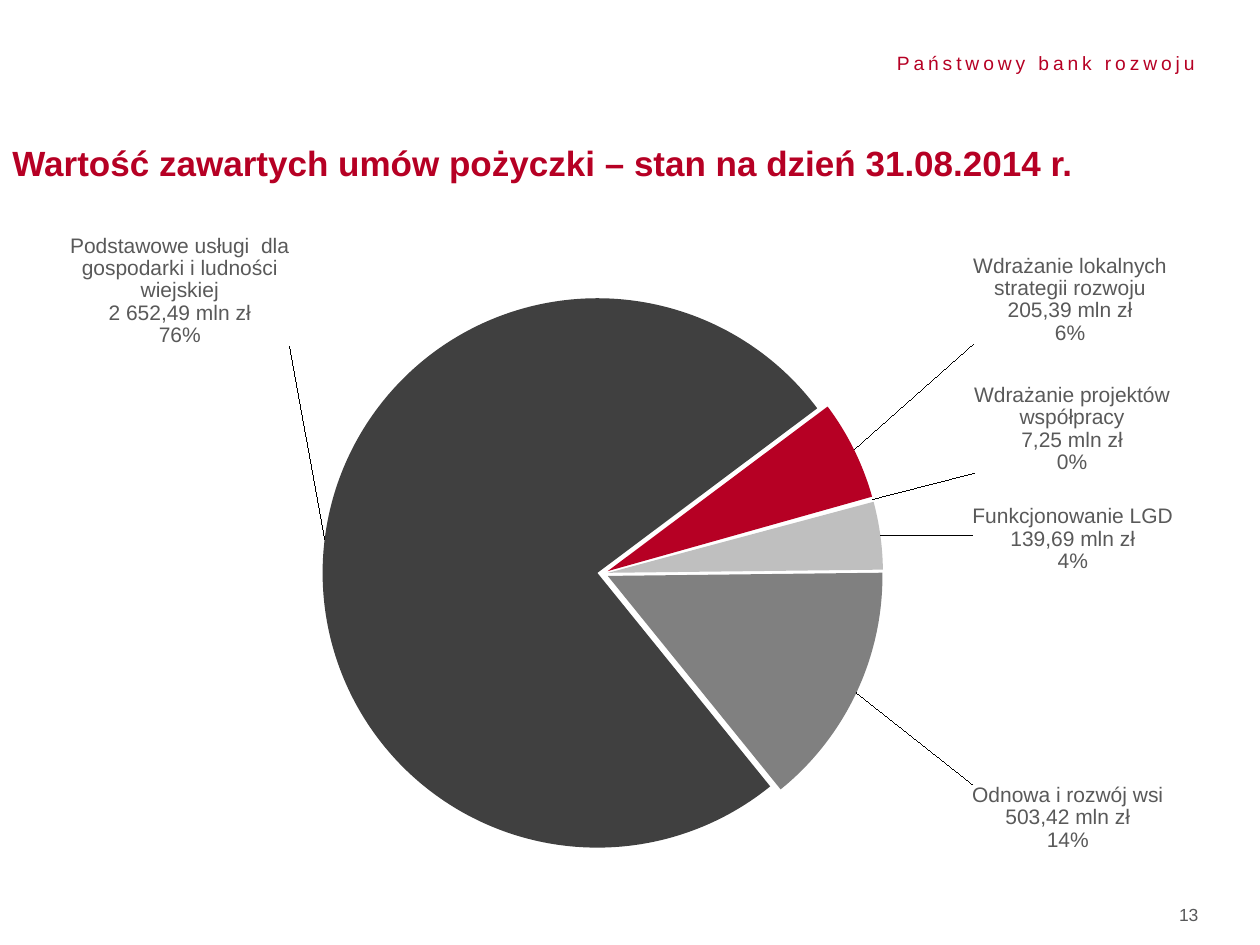
from lxml.etree import SubElement
from pptx import Presentation
from pptx.chart.data import CategoryChartData
from pptx.dml.color import RGBColor
from pptx.enum.chart import XL_CHART_TYPE
from pptx.enum.text import MSO_ANCHOR, PP_ALIGN
from pptx.oxml import parse_xml
from pptx.oxml.ns import nsdecls, qn
from pptx.util import Inches, Pt

COLUMNS, ROWS = 100, 75
CELL = Inches(0.1)
FONT = "Arial"
COLORS = {
    "red": "B60024", "silver": "BFBFBF", "grey": "808080", "charcoal": "404040",
    "white": "FFFFFF", "black": "000000", "label": "595959", "number": "58595A",
}
SLICES = [
    ("Funkcjonowanie LGD", 139.69, "139,69 mln zł", "4%", "silver"),
    ("Odnowa i rozwój wsi", 503.42, "503,42 mln zł", "14%", "grey"),
    ("Podstawowe usługi  dla gospodarki i ludności wiejskiej", 2652.49,
     "2 652,49 mln zł", "76%", "charcoal"),
    ("Wdrażanie lokalnych strategii rozwoju", 205.39, "205,39 mln zł", "6%", "red"),
    ("Wdrażanie projektów współpracy", 7.25, "7,25 mln zł", "0%", "white"),
]
LABEL_SHIFTS = [(0.073, 0.06), (0.094, 0.139), (-0.024, -0.302),
                (0.097, -0.161), (0.081, -0.038)]


def grid(*cells):
    """Turn grid columns and rows into lengths."""
    return [int(cell * CELL) for cell in cells]


def color(name):
    """Look up a colour by name."""
    return RGBColor.from_string(COLORS[name])


def style(font, size, shade):
    """Set the typeface, size and colour of a font."""
    font.name = FONT
    font.size = Pt(size)
    font.color.rgb = color(shade)


def add_text(page, place, text, size, shade, align=PP_ALIGN.LEFT,
             anchor=MSO_ANCHOR.MIDDLE, wrap=True):
    """Add a one-paragraph text box and return the paragraph."""
    frame = page.shapes.add_textbox(*grid(*place)).text_frame
    frame.word_wrap = wrap
    frame.vertical_anchor = anchor
    frame.text = text
    para = frame.paragraphs[0]
    para.alignment = align
    style(para.font, size, shade)
    return para


def add_header(page):
    """Add the letter-spaced header line."""
    para = add_text(page, (70.2, 3.6, 32.3, 3.9), "Państwowy bank rozwoju", 11,
                    "red", anchor=MSO_ANCHOR.TOP, wrap=False)
    para.runs[0].font._element.set("spc", "220")


def add_title(page):
    """Add the bold slide title."""
    title = "Wartość zawartych umów pożyczki – stan na dzień 31.08.2014 r."
    para = add_text(page, (0, 10.5, 92.1, 4.8), title, 20, "red")
    para.font.bold = True


def make_layout(settings):
    """Make a manual chart layout from its settings."""
    layout = parse_xml(f'<c:layout {nsdecls("c")}><c:manualLayout/></c:layout>')
    for tag, value in settings.items():
        SubElement(layout[0], qn(f"c:{tag}")).set("val", str(value))
    return layout


def add_pie(page):
    """Add the pie chart of loan values."""
    data = CategoryChartData(number_format='#,##0.00\\ "zł"')
    data.categories = [name for name, *_ in SLICES]
    data.add_series("Series 1", [value for _, value, *_ in SLICES])
    chart = page.shapes.add_chart(
        XL_CHART_TYPE.PIE, *grid(3.5, 18.6, 92.1, 50.4), data).chart
    chart.has_title = False
    chart.has_legend = False
    style(chart.font, 18, "black")
    plot = chart.plots[0]
    plot.vary_by_categories = True
    series = plot.series[0]
    for index, (*_, shade) in enumerate(SLICES):
        shape = series.points[index].format
        shape.fill.solid()
        shape.fill.fore_color.rgb = color(shade)
        shape.line.fill.background()
    arrange_pie(series)
    label_slices(series)


def arrange_pie(series):
    """Place the plot, turn the first slice and part the slices."""
    explosion = f'<c:explosion {nsdecls("c")} val="2"/>'
    series._element.find(qn("c:tx")).addnext(parse_xml(explosion))
    for point in series._element.findall(qn("c:dPt")):
        point.find(qn("c:spPr")).addprevious(parse_xml(explosion))
    pie = series._element.getparent()
    angle = pie.find(qn("c:firstSliceAng"))
    if angle is None:
        angle = SubElement(pie, qn("c:firstSliceAng"))
    angle.set("val", "75")
    area = pie.getparent()
    for layout in area.findall(qn("c:layout")):
        area.remove(layout)
    area.insert(0, make_layout({
        "layoutTarget": "inner", "xMode": "edge", "yMode": "edge",
        "x": 0.24, "y": 0.093, "w": 0.483, "h": 0.883}))


def label_slices(series):
    """Label each slice with its name, amount and share."""
    labels = series.data_labels
    labels.show_category_name = True
    labels.show_value = True
    labels.show_percentage = True
    labels.number_format = '#,##0.00\\ "zł"'
    labels.number_format_is_linked = False
    style(labels.font, 12, "label")
    for index, (name, _, amount, share, _) in enumerate(SLICES):
        frame = series.points[index].data_label.text_frame
        frame.text = "\n".join([name, amount, share])
        frame.word_wrap = True
        for para in frame.paragraphs:
            style(para.runs[0].font, 12, "label")
    for body in labels._element.iter(qn("a:bodyPr")):
        body.set("wrap", "square")
    for label, (right, down) in zip(labels._element.findall(qn("c:dLbl")), LABEL_SHIFTS):
        label.find(qn("c:idx")).addnext(make_layout({"x": right, "y": down}))
        for tag in ("showVal", "showCatName", "showPercent"):
            label.find(qn(f"c:{tag}")).set("val", "1")
    leader = labels._element.find(qn("c:showLeaderLines"))
    if leader is None:
        leader = SubElement(labels._element, qn("c:showLeaderLines"))
    leader.set("val", "1")


def main():
    """Build and save the slide."""
    deck = Presentation()
    deck.slide_width, deck.slide_height = grid(COLUMNS, ROWS)
    page = deck.slides.add_slide(deck.slide_layouts[6])
    add_header(page)
    add_pie(page)
    add_text(page, (72.8, 71.2, 23.3, 2.8), "13", 10, "number", PP_ALIGN.RIGHT)
    add_title(page)
    deck.save("out.pptx")


if __name__ == "__main__":
    main()
